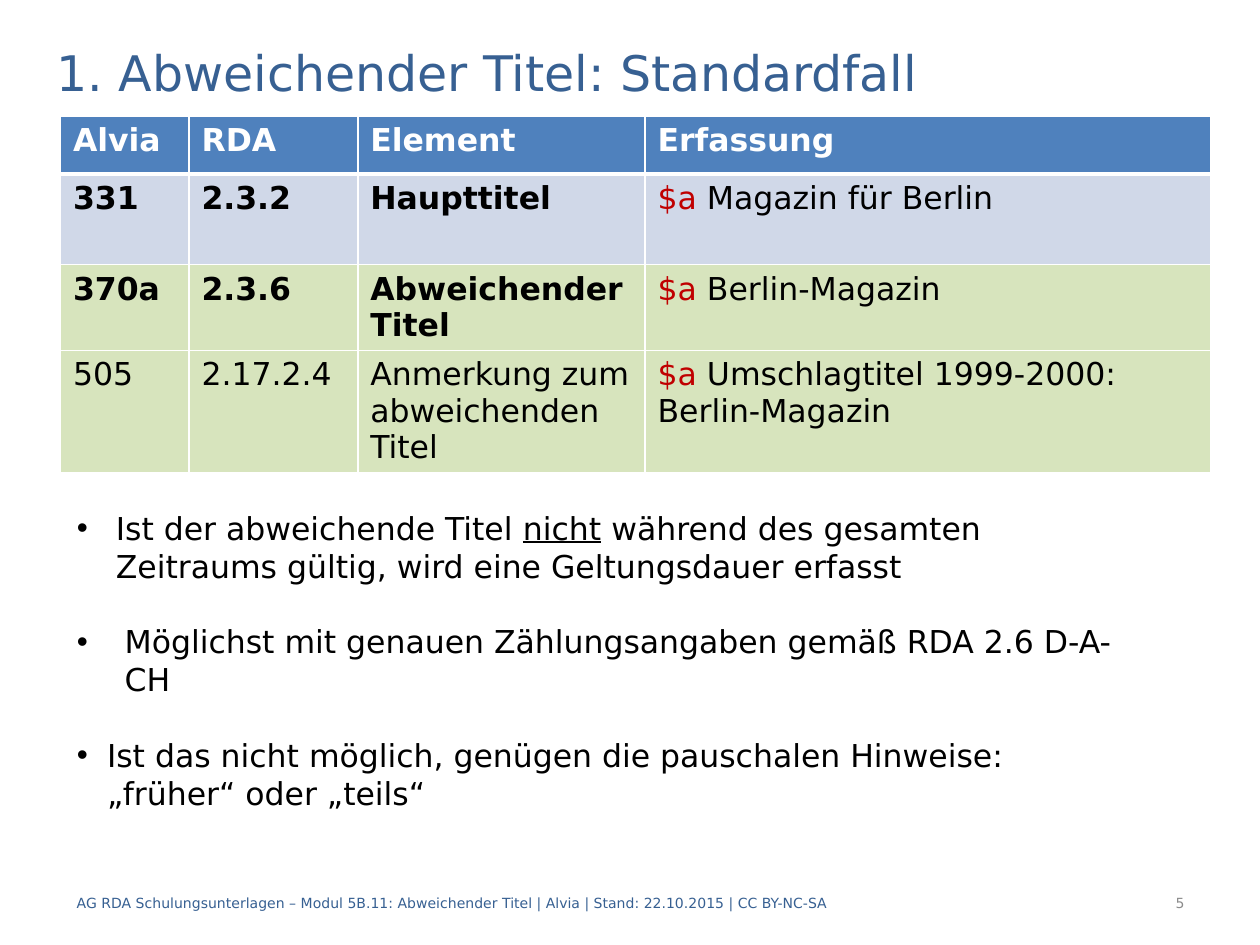
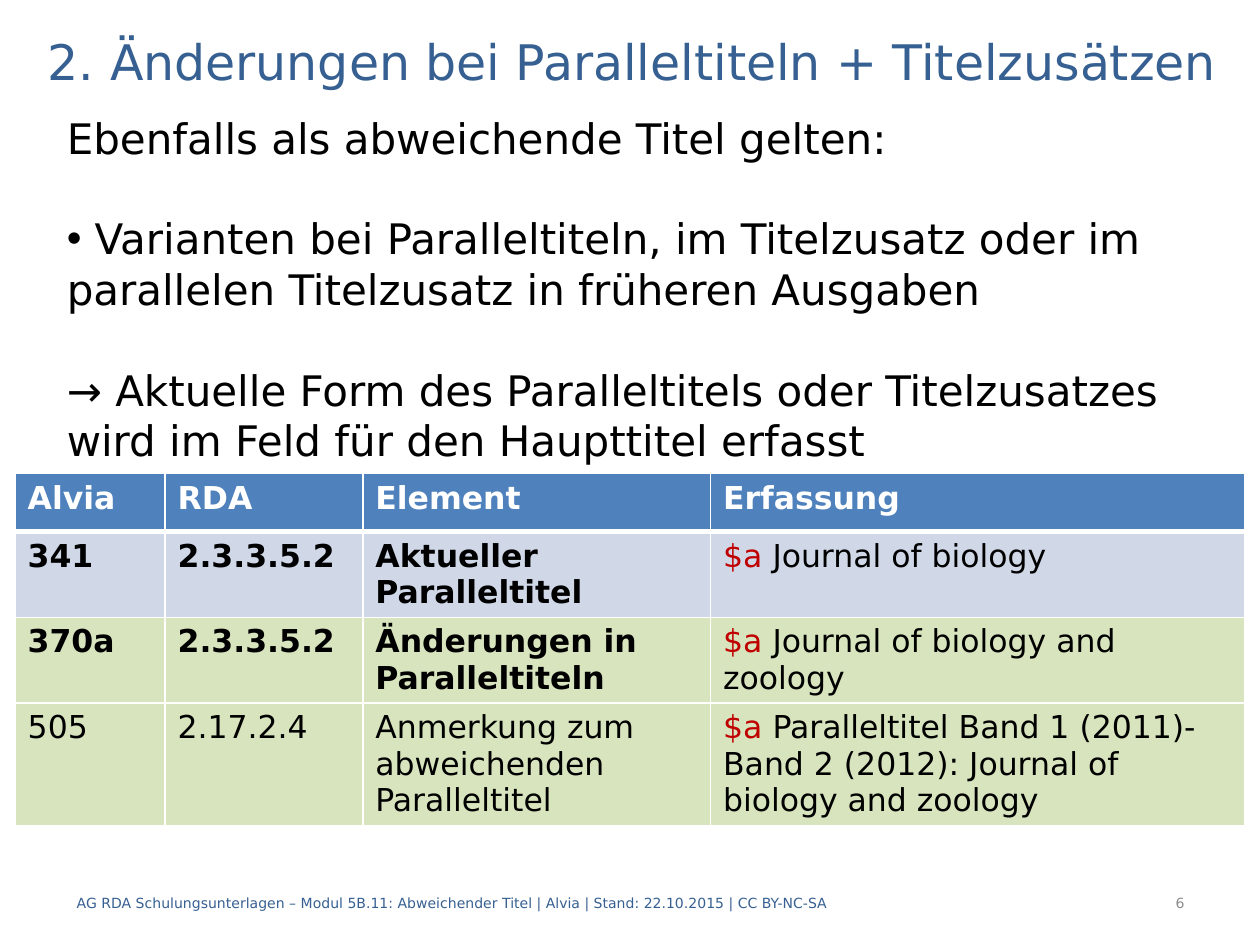
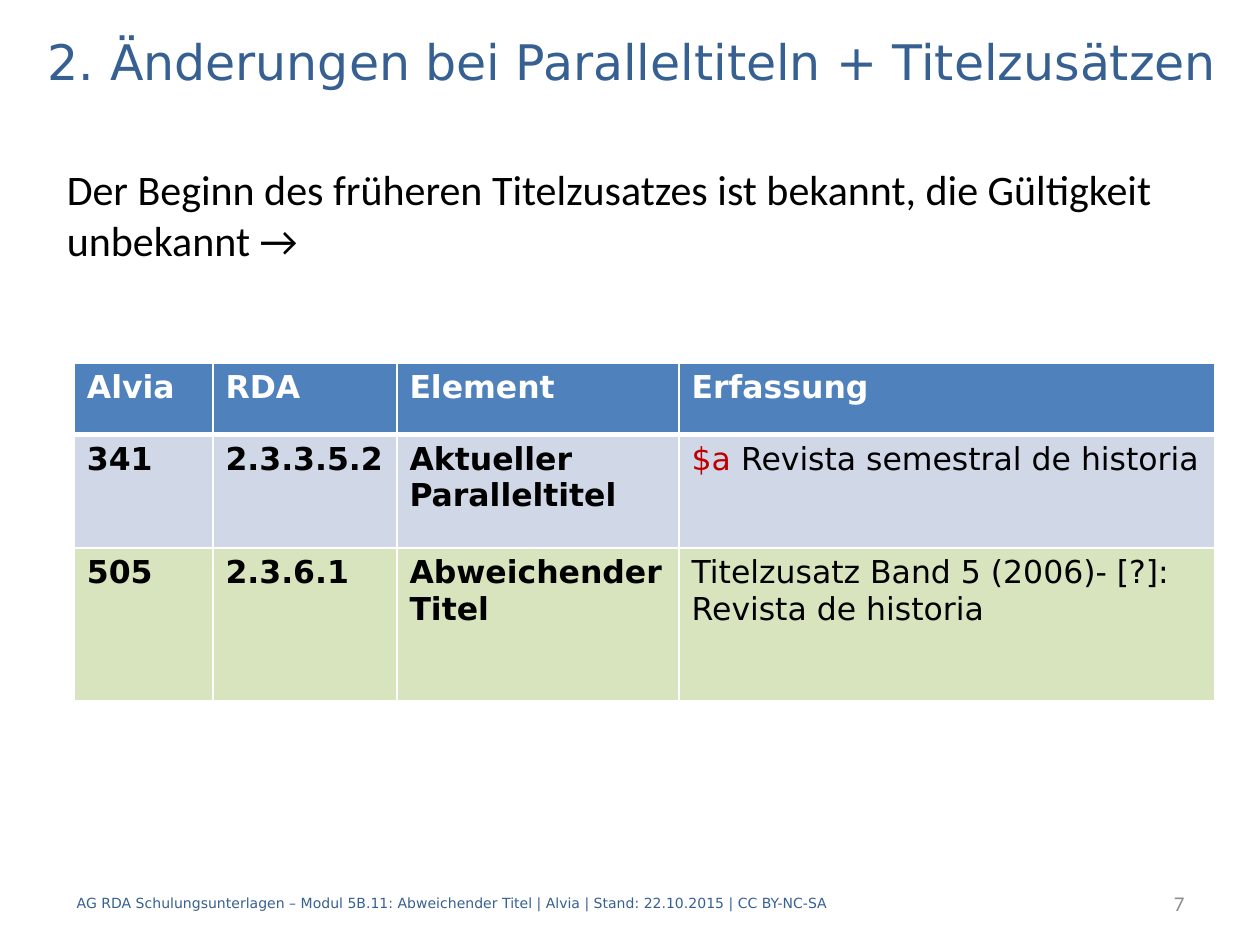
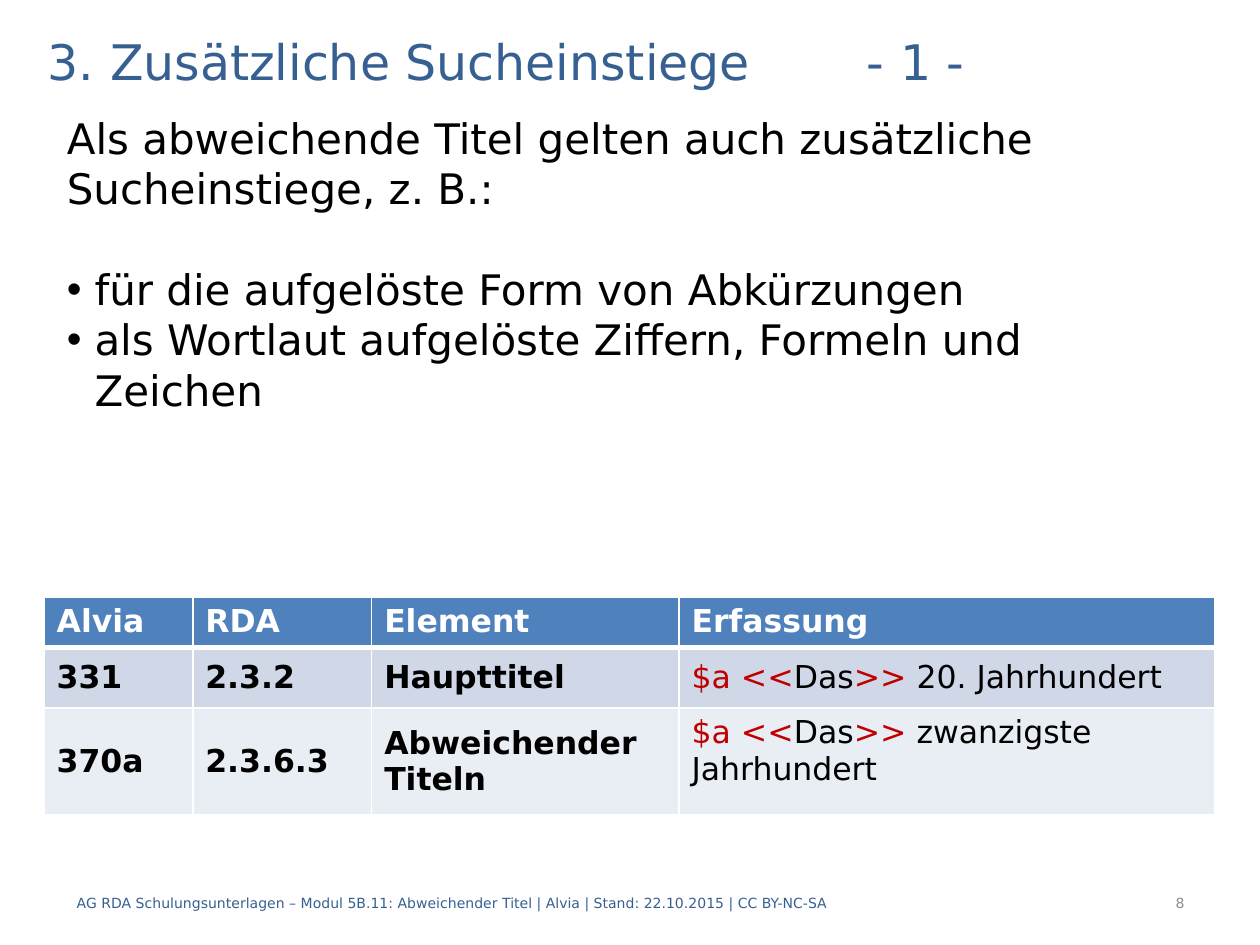
from dataclasses import dataclass
from itertools import cycle

from lxml.etree import SubElement
from pptx import Presentation
from pptx.dml.color import RGBColor
from pptx.enum.text import MSO_ANCHOR as Anchor, MSO_AUTO_SIZE as AutoSize, PP_ALIGN as Align
from pptx.oxml.ns import qn
from pptx.util import Inches, Pt


@dataclass(frozen=True)
class Theme:
    """Colours, fonts and type sizes of the whole deck."""
    heading: str = "376092"
    number: str = "8C8C8C"
    ink: str = "000000"
    paper: str = "FFFFFF"
    code: str = "C00000"
    head: str = "4F81BD"
    current: str = "D0D8E8"
    variant: str = "D7E4BD"
    pale: str = "E9EDF4"
    sans: str = "DejaVu Sans"
    humanist: str = "Calibri"
    title_size: int = 28
    lead_size: int = 24
    text_size: int = 18
    small_size: int = 8
    leading: float = 1.2


@dataclass(frozen=True)
class Line:
    """One paragraph; in a tuple every second part is underlined."""
    text: str | tuple
    hang: float = 0
    indent: float = 0
    bullet: bool = False
    gap: bool = False


@dataclass(frozen=True)
class Entry:
    """One table row; in a tuple every first part is a subfield code."""
    cells: tuple
    fill: str
    height: float
    bold: bool = True
    anchors: str = "tttt"


THEME = Theme()
WIDTH, HEIGHT = Inches(10), Inches(7.5)
COLUMNS = 100
UNIT = WIDTH // COLUMNS
FOOTER_BOX = (5.1, 69.7, 66.9, 4)
NUMBER_BOX = (79.1, 69.7, 15.9, 4)
TITLE_BOX = (2.8, 2, 97.2, 5.6)
LEAD_BOX = (4.3, 8.4, 90.6, 29.3)
FOOTER = "AG RDA Schulungsunterlagen – Modul 5B.11: Abweichender Titel | Alvia | Stand: 22.10.2015 | CC BY-NC-SA"
HEADINGS = ("Alvia", "RDA", "Element", "Erfassung")
PARALLEL_TITLE = "2. Änderungen bei Paralleltiteln + Titelzusätzen"


def grid(*cells):
    """Turn grid cells into slide lengths."""
    return [round(cell * UNIT) for cell in cells]


def style(font, size=None, color=None, face=None, bold=None):
    """Set the given properties of a font."""
    if size:
        font.size = Pt(size)
    if color:
        font.color.rgb = RGBColor.from_string(color)
    if face:
        font.name = face
    if bold is not None:
        font.bold = bold


def place(placeholder, box, anchor):
    """Move a placeholder to its box and return its text frame."""
    placeholder.left, placeholder.top, placeholder.width, placeholder.height = grid(*box)
    frame = placeholder.text_frame
    frame.auto_size = AutoSize.NONE
    frame.vertical_anchor = anchor
    frame.word_wrap = True
    return frame


def add_title(slide, text, box):
    """Write the slide title."""
    heading = place(slide.shapes.title, box, Anchor.MIDDLE).paragraphs[0]
    heading.text = text
    heading.alignment = Align.LEFT
    style(heading.font, THEME.title_size, THEME.heading, THEME.sans)


def set_bullet(paragraph, line):
    """Set the hanging indent and the bullet of a paragraph."""
    properties = paragraph._p.get_or_add_pPr()
    properties.set("marL", str(grid(line.hang + line.indent)[0]))
    properties.set("indent", str(grid(-line.hang)[0]))
    if line.bullet:
        SubElement(properties, qn("a:buFont"), typeface="Arial")
        SubElement(properties, qn("a:buChar"), char="•")
    else:
        SubElement(properties, qn("a:buNone"))


def add_body(slide, lines, box, size, face=THEME.sans, anchor=Anchor.TOP):
    """Write the explanatory list in the body placeholder."""
    frame = place(slide.placeholders[1], box, anchor)
    for index, line in enumerate(lines):
        paragraph = frame.add_paragraph() if index else frame.paragraphs[0]
        set_bullet(paragraph, line)
        spacing = Pt(size * THEME.leading)
        paragraph.line_spacing = spacing
        paragraph.space_before = spacing if line.gap else 0
        paragraph.alignment = Align.LEFT
        style(paragraph.font, size, THEME.ink, face)
        parts = line.text if isinstance(line.text, tuple) else (line.text,)
        for part, underlined in zip(parts, cycle((None, True))):
            run = paragraph.add_run()
            run.text = part
            run.font.underline = underlined


def add_note(slide, text, box, color, size, face, align):
    """Write one line at the foot of the slide."""
    frame = slide.shapes.add_textbox(*grid(*box)).text_frame
    frame.word_wrap = True
    frame.vertical_anchor = Anchor.MIDDLE
    note = frame.paragraphs[0]
    note.text = text
    note.alignment = align
    style(note.font, size, color, face)


def add_footer(slide, number, size=THEME.small_size, face=THEME.sans):
    """Write the footer and the page number."""
    add_note(slide, FOOTER, FOOTER_BOX, THEME.heading, THEME.small_size, THEME.sans, Align.LEFT)
    add_note(slide, str(number), NUMBER_BOX, THEME.number, size, face, Align.RIGHT)


def set_borders(cell, top, bottom):
    """Draw white rules round a cell."""
    properties = cell._tc.get_or_add_tcPr()
    for index, (side, points) in enumerate((("L", 1), ("R", 1), ("T", top), ("B", bottom))):
        rule = SubElement(properties, qn(f"a:ln{side}"), w=str(Pt(points)))
        fill = SubElement(rule, qn("a:solidFill"))
        SubElement(fill, qn("a:srgbClr"), val=THEME.paper)
        properties.insert(index, rule)


def fill_cell(cell, content, fill, color, bold, anchor):
    """Write and colour one table cell."""
    cell.fill.solid()
    cell.fill.fore_color.rgb = RGBColor.from_string(fill)
    cell.vertical_anchor = anchor
    paragraph = cell.text_frame.paragraphs[0]
    if isinstance(content, tuple):
        style(paragraph.font, THEME.text_size, None, THEME.sans, bold)
        for part, part_color in zip(content, cycle((THEME.code, color))):
            run = paragraph.add_run()
            run.text = part
            style(run.font, color=part_color)
    else:
        paragraph.text = content
        style(paragraph.font, THEME.text_size, color, THEME.sans, bold)


def add_fields(slide, corner, widths, head_height, entries):
    """Build the table of catalogue fields."""
    rows = (Entry(HEADINGS, THEME.head, head_height), *entries)
    box = grid(*corner, sum(widths), sum(row.height for row in rows))
    fields = slide.shapes.add_table(len(rows), len(widths), *box).table
    fields.horz_banding = False
    for column, width in zip(fields.columns, grid(*widths)):
        column.width = width
    for index, entry in enumerate(rows):
        fields.rows[index].height = grid(entry.height)[0]
        color = THEME.ink if index else THEME.paper
        for position, content in enumerate(entry.cells):
            cell = fields.cell(index, position)
            bold = entry.bold and (index == 0 or position < len(widths) - 1)
            anchor = Anchor.MIDDLE if entry.anchors[position] == "m" else Anchor.TOP
            fill_cell(cell, content, entry.fill, color, bold, anchor)
            set_borders(cell, 3 if index == 1 else 1, 1 if index else 3)


def build_standard_case(slide):
    """Standard case of a variant title."""
    add_title(slide, "1. Abweichender Titel: Standardfall", (3.5, 2.9, 92.1, 5.6))
    add_fields(slide, (4.8, 9.2), (10.2, 13.4, 22.8, 44.9), 4.6, (
        Entry(("331", "2.3.2", "Haupttitel", ("$a", " Magazin für Berlin")), THEME.current, 7.2),
        Entry(("370a", "2.3.6", "Abweichender Titel", ("$a ", "Berlin-Magazin")), THEME.variant, 6.2),
        Entry(("505", "2.17.2.4", "Anmerkung zum abweichenden Titel",
               ("$a ", "Umschlagtitel 1999-2000: Berlin-Magazin")), THEME.variant, 9.6, bold=False),
    ))
    add_body(slide, (
        Line(("Ist der abweichende Titel ", "nicht",
              " während des gesamten Zeitraums gültig, wird eine Geltungsdauer erfasst"), 3.1, bullet=True),
        Line("Möglichst mit genauen Zählungsangaben gemäß RDA 2.6 D-A-CH", 3.8, bullet=True, gap=True),
        Line("Ist das nicht möglich, genügen die pauschalen Hinweise:", 2.4, bullet=True, gap=True),
        Line("„früher“ oder „teils“", indent=2.4),
    ), (5.1, 39.9, 86.6, 28.3), THEME.text_size)
    add_footer(slide, 5)


def build_parallel_titles(slide):
    """Changes in parallel titles."""
    add_title(slide, PARALLEL_TITLE, TITLE_BOX)
    add_body(slide, (
        Line("Ebenfalls als abweichende Titel gelten:"),
        Line(" Varianten bei Paralleltiteln, im Titelzusatz oder im parallelen Titelzusatz in früheren Ausgaben",
             bullet=True, gap=True),
        Line("→ Aktuelle Form des Paralleltitels oder Titelzusatzes wird im Feld für den Haupttitel erfasst",
             gap=True),
    ), LEAD_BOX, THEME.lead_size)
    add_fields(slide, (1.2, 37.6), (11.9, 15.7, 27.6, 42.4), 4.6, (
        Entry(("341", "2.3.3.5.2", "Aktueller Paralleltitel", ("$a ", "Journal of biology")),
              THEME.current, 6.1),
        Entry(("370a", "2.3.3.5.2", "Änderungen in Paralleltiteln",
               ("$a ", "Journal of biology and zoology")), THEME.variant, 6.3),
        Entry(("505", "2.17.2.4", "Anmerkung zum abweichenden Paralleltitel",
               ("$a ", "Paralleltitel Band 1 (2011)-Band 2 (2012): Journal of biology and zoology")),
              THEME.variant, 9.6, bold=False),
    ))
    add_footer(slide, 6)


def build_unknown_validity(slide):
    """Earlier title addition whose validity is unknown."""
    add_title(slide, PARALLEL_TITLE, TITLE_BOX)
    add_body(slide, (
        Line("Der Beginn des früheren Titelzusatzes ist bekannt, die Gültigkeit unbekannt →"),
    ), (4.3, 8.4, 90.6, 13.1), THEME.lead_size, THEME.humanist, Anchor.BOTTOM)
    add_fields(slide, (5.9, 28.8), (11, 14.6, 22.4, 42.5), 5.7, (
        Entry(("341", "2.3.3.5.2", "Aktueller Paralleltitel", ("$a ", "Revista semestral de historia")),
              THEME.current, 9),
        Entry(("505", "2.3.6.1", "Abweichender Titel",
               "Titelzusatz Band 5 (2006)- [?]: Revista de historia"), THEME.variant, 12.1),
    ))
    add_footer(slide, 7, 12, THEME.humanist)


def build_access_points(slide):
    """Additional access points."""
    add_title(slide, "3. Zusätzliche Sucheinstiege\t\t- 1 -", (2.8, 2, 94.5, 5.6))
    add_body(slide, (
        Line("Als abweichende Titel gelten auch zusätzliche Sucheinstiege, z. B.:"),
        Line("für die aufgelöste Form von Abkürzungen", 2.2, bullet=True, gap=True),
        Line("als Wortlaut aufgelöste Ziffern, Formeln und Zeichen", 2.2, bullet=True),
    ), LEAD_BOX, THEME.lead_size)
    add_fields(slide, (3.5, 47.4), (11.8, 14.2, 24.4, 42.5), 4, (
        Entry(("331", "2.3.2", "Haupttitel", ("$a <<", "Das", ">> ", "20. Jahrhundert")),
              THEME.current, 4.8, anchors="mmmm"),
        Entry(("370a", "2.3.6.3", "Abweichender Titeln", ("$a <<", "Das", ">> ", "zwanzigste Jahrhundert")),
              THEME.pale, 8.5, anchors="mmmt"),
    ))
    add_footer(slide, 8)


def main():
    """Build and save the deck."""
    deck = Presentation()
    deck.slide_width, deck.slide_height = WIDTH, HEIGHT
    title_and_content = deck.slide_layouts[1]
    for build in (build_standard_case, build_parallel_titles, build_unknown_validity, build_access_points):
        build(deck.slides.add_slide(title_and_content))
    deck.save("out.pptx")


if __name__ == "__main__":
    main()
